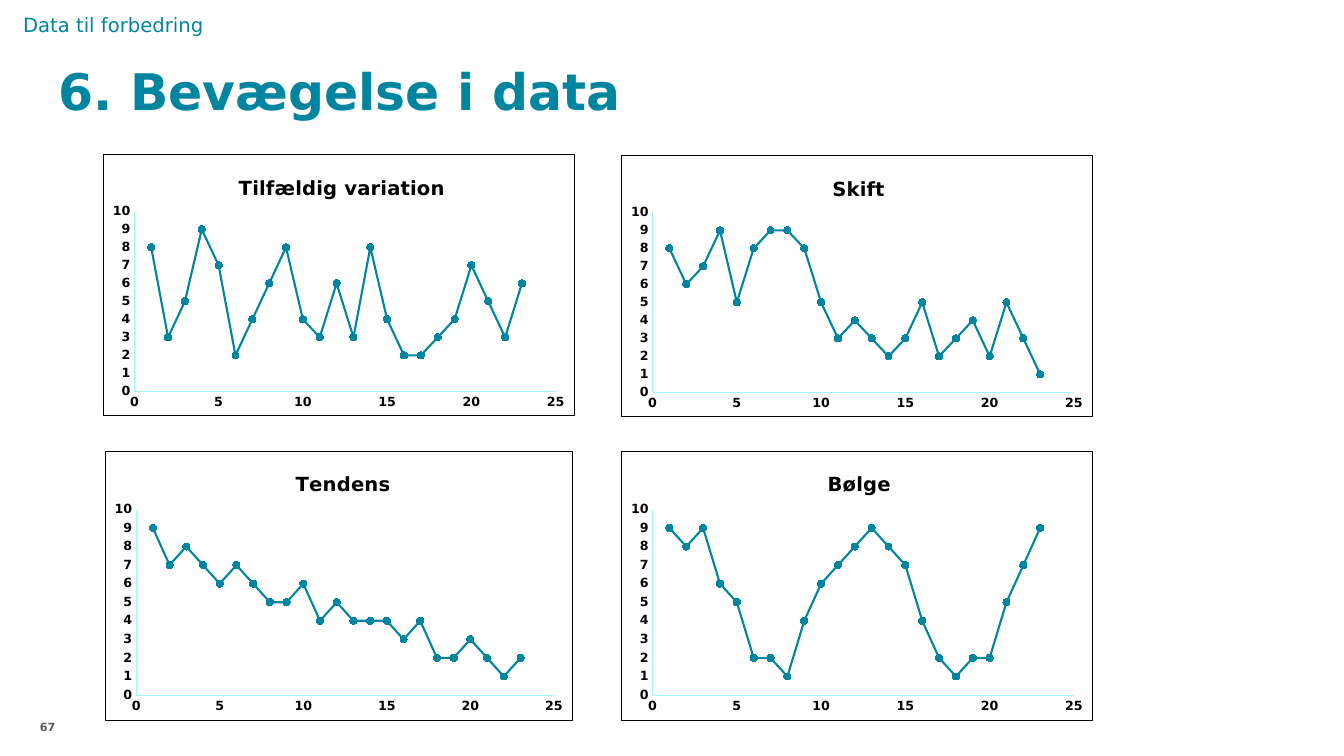
from dataclasses import dataclass

from lxml import etree
from pptx import Presentation
from pptx.chart.axis import _BaseAxis
from pptx.chart.chart import Chart
from pptx.chart.data import XyChartData
from pptx.dml.color import RGBColor
from pptx.enum.chart import XL_CHART_TYPE, XL_MARKER_STYLE, XL_TICK_MARK
from pptx.enum.text import MSO_ANCHOR, PP_ALIGN
from pptx.oxml import parse_xml
from pptx.oxml.ns import nsdecls, qn
from pptx.slide import Slide
from pptx.text.text import Font, TextFrame
from pptx.util import Inches, Pt

SCATTER = XL_CHART_TYPE.XY_SCATTER_LINES
CIRCLE = XL_MARKER_STYLE.CIRCLE
NO_TICK = XL_TICK_MARK.NONE
LEFT, RIGHT = PP_ALIGN.LEFT, PP_ALIGN.RIGHT
TOP, BOTTOM = MSO_ANCHOR.TOP, MSO_ANCHOR.BOTTOM

FONT = "DejaVu Sans"
TEAL = "0085A1"
HEADER_TEAL = "0085A0"
AXIS_CYAN = "A7F0FF"
GREY = "595959"
BLACK = "000000"


@dataclass
class RunChart:
    title: str
    title_left: float  # share of the chart width
    left: float
    top: float
    width: float
    height: float
    values: list[int]


RUN_CHARTS = [
    RunChart("Tilfældig variation", 0.28, 1.02, 1.53, 4.68, 2.6,
             [8, 3, 5, 9, 7, 2, 4, 6, 8, 4, 3, 6, 3, 8, 4, 2, 2, 3, 4, 7, 5, 3, 6]),
    RunChart("Skift", 0.44, 6.16, 1.54, 4.68, 2.6,
             [8, 6, 7, 9, 5, 8, 9, 9, 8, 5, 3, 4, 3, 2, 3, 5, 2, 3, 4, 2, 5, 3, 1]),
    RunChart("Tendens", 0.4, 1.04, 4.47, 4.64, 2.68,
             [9, 7, 8, 7, 6, 7, 6, 5, 5, 6, 4, 5, 4, 4, 4, 3, 4, 2, 2, 3, 2, 1, 2]),
    RunChart("Bølge", 0.43, 6.16, 4.47, 4.68, 2.68,
             [9, 8, 9, 6, 5, 2, 2, 1, 4, 6, 7, 8, 9, 8, 7, 4, 2, 1, 2, 2, 5, 7, 9]),
]


def color(value: str) -> RGBColor:
    return RGBColor.from_string(value)


def style_font(font: Font, size: float, shade: str, bold: bool = False) -> None:
    font.name = FONT
    font.size = Pt(size)
    font.bold = bold
    font.color.rgb = color(shade)


def write_text(frame: TextFrame, text: str, size: float, shade: str,
               bold: bool = False, align: PP_ALIGN = LEFT) -> None:
    para = frame.paragraphs[0]
    para.alignment = align
    span = para.add_run()
    span.text = text
    style_font(span.font, size, shade, bold)


def clear_margins(frame: TextFrame) -> None:
    frame.margin_left = frame.margin_right = 0
    frame.margin_top = frame.margin_bottom = 0


def add_label(page: Slide, left: float, top: float, width: float,
              height: float) -> TextFrame:
    box = page.shapes.add_textbox(Inches(left), Inches(top), Inches(width), Inches(height))
    frame = box.text_frame
    frame.word_wrap = True
    frame.vertical_anchor = TOP
    return frame


def manual_layout(target: str, **shares: float) -> etree._Element:
    inner = f'<c:layoutTarget val="{target}"/>' if target else ""
    modes = "".join(f'<c:{key}Mode val="edge"/>' for key in "xy")
    sizes = "".join(f'<c:{key} val="{share}"/>' for key, share in shares.items())
    return parse_xml(f'<c:layout {nsdecls("c")}><c:manualLayout>{inner}{modes}{sizes}'
                     '</c:manualLayout></c:layout>')


def drop_layout(element: etree._Element) -> None:
    for layout in element.findall(qn("c:layout")):
        element.remove(layout)


def style_axis(axis: _BaseAxis, maximum: float, step: float) -> None:
    axis.minimum_scale, axis.maximum_scale = 0, maximum
    axis.major_unit = step
    axis.has_major_gridlines = False
    axis.major_tick_mark = axis.minor_tick_mark = NO_TICK
    axis.format.line.color.rgb = color(AXIS_CYAN)
    axis.format.line.width = Pt(0.75)
    style_font(axis.tick_labels.font, 9, BLACK, bold=True)


def arrange_chart(chart: Chart, title_left: float) -> None:
    space = chart.element
    # Title and plot area
    title = space.find(f".//{qn('c:title')}")
    drop_layout(title)
    title.find(qn("c:tx")).addnext(manual_layout("", x=title_left, y=0.06))
    plot_area = space.find(f".//{qn('c:plotArea')}")
    drop_layout(plot_area)
    plot_area.insert(0, manual_layout("inner", x=0.066, y=0.217, w=0.895, h=0.69))
    # Frame around the chart
    space.find(qn("c:chart")).addnext(parse_xml(
        f'<c:spPr {nsdecls("c", "a")}><a:noFill/><a:ln w="{Pt(0.75)}"><a:solidFill>'
        f'<a:srgbClr val="{BLACK}"/></a:solidFill></a:ln></c:spPr>'))


def add_run_chart(page: Slide, item: RunChart) -> None:
    data = XyChartData()
    points = data.add_series("Series 1")
    for number, value in enumerate(item.values, start=1):
        points.add_data_point(number, value)
    chart = page.shapes.add_chart(SCATTER, Inches(item.left), Inches(item.top),
                                  Inches(item.width), Inches(item.height), data).chart
    style_font(chart.font, 10, HEADER_TEAL)
    chart.has_legend = False
    chart.has_title = True
    write_text(chart.chart_title.text_frame, item.title, 14, BLACK, bold=True)
    chart.chart_title.include_in_layout = False
    style_axis(chart.category_axis, 25, 5)
    style_axis(chart.value_axis, 10, 1)

    chart.plots[0].vary_by_categories = False
    series = chart.plots[0].series[0]
    series.smooth = False
    series.format.line.color.rgb = color(TEAL)
    series.format.line.width = Pt(1.5)
    series.marker.style = CIRCLE
    series.marker.size = 5
    series.marker.format.fill.solid()
    series.marker.format.fill.fore_color.rgb = color(TEAL)
    series.marker.format.line.color.rgb = color(TEAL)
    arrange_chart(chart, item.title_left)


def main() -> None:
    deck = Presentation()
    deck.slide_width, deck.slide_height = Inches(13.33), Inches(7.5)
    page = deck.slides.add_slide(deck.slide_layouts[5])

    # Title
    title = page.shapes.title
    title.left, title.top = Inches(0.58), Inches(0.43)
    title.width, title.height = Inches(12.16), Inches(0.78)
    clear_margins(title.text_frame)
    title.text_frame.vertical_anchor = BOTTOM
    write_text(title.text_frame, "6. Bevægelse i data", 36, TEAL, bold=True)
    title.text_frame.paragraphs[0].line_spacing = 0.9

    # Page number and section header
    number = add_label(page, 0.16, 7.15, 0.39, 0.35)
    clear_margins(number)
    write_text(number, "67", 8, GREY, bold=True, align=RIGHT)
    write_text(add_label(page, 0.13, 0.08, 3.69, 0.34), "Data til forbedring", 14, HEADER_TEAL)

    # Four run charts
    for item in RUN_CHARTS:
        add_run_chart(page, item)

    deck.save("out.pptx")


if __name__ == "__main__":
    main()
